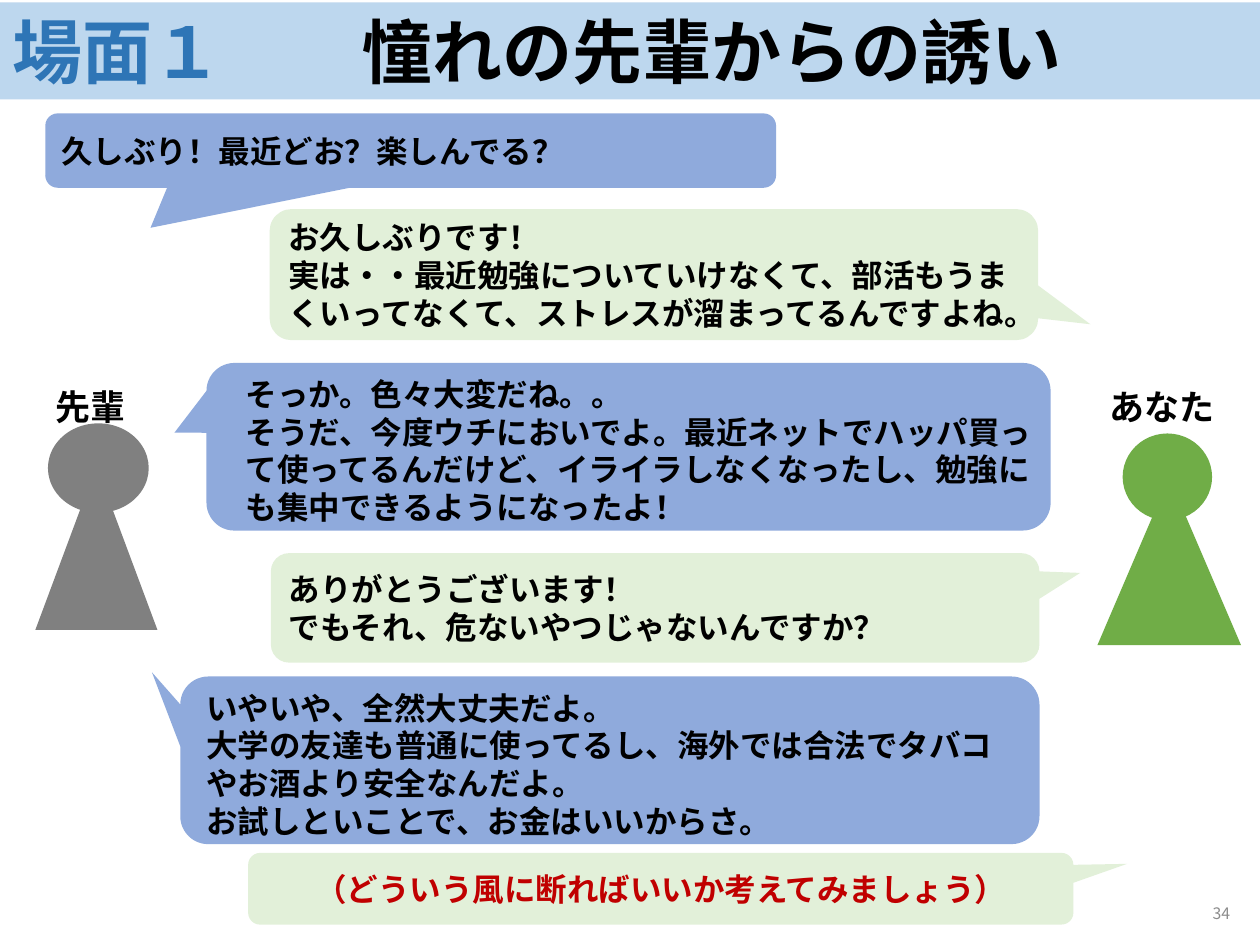
from lxml import etree
from pptx import Presentation
from pptx.dml.color import RGBColor
from pptx.enum import shapes, text
from pptx.oxml import ns
from pptx.util import Pt

BLUE = RGBColor(0x8F, 0xAA, 0xDC)
MINT = RGBColor(0xE2, 0xF0, 0xD9)
SKY = RGBColor(0xBD, 0xD7, 0xEE)
NAVY = RGBColor(0x2E, 0x75, 0xB6)
GRAY = RGBColor(0x80, 0x80, 0x80)
GREEN = RGBColor(0x70, 0xAD, 0x47)
PALE = RGBColor(0x8C, 0x8C, 0x8C)
RED = RGBColor(0xC0, 0, 0)
BLACK = RGBColor(0, 0, 0)
FONT = "Noto Sans CJK JP"
KIND = shapes.MSO_SHAPE
LEFT, MID, RIGHT = text.PP_ALIGN.LEFT, text.PP_ALIGN.CENTER, text.PP_ALIGN.RIGHT


def draw(home, kind, box, fill):
    shape = home.add_shape(kind, *map(Pt, box))
    shape.shadow.inherit = False
    shape.fill.solid()
    shape.fill.fore_color.rgb = fill
    shape.line.fill.background()
    return shape


def write(shape, lines, size=18, color=BLACK, bold=True, align=LEFT):
    """Fill the shape with one paragraph per line; a line is a list of (words, color) or a string."""
    frame = shape.text_frame
    frame.word_wrap = True
    frame.vertical_anchor = text.MSO_ANCHOR.MIDDLE
    for i, line in enumerate(lines):
        para = frame.add_paragraph() if i else frame.paragraphs[0]
        para.alignment = align
        para.line_spacing = Pt(size * 1.2)
        for words, tint in [(line, color)] if isinstance(line, str) else line:
            run = para.add_run()
            run.text = words
            for key, val in {"name": FONT, "size": Pt(size), "bold": bold}.items():
                setattr(run.font, key, val)
            run.font.color.rgb = tint
            east = etree.SubElement(run._r.get_or_add_rPr(), ns.qn("a:ea"))
            east.set("typeface", FONT)


deck = Presentation()
deck.slide_width, deck.slide_height = Pt(720), Pt(540)
page = deck.slides.add_slide(deck.slide_layouts[6]).shapes

# Title bar, with a tab stop between scene number and title
bar = draw(page, KIND.RECTANGLE, (0, 1.4, 720, 55.4), SKY)
write(bar, [[("場面１\t", NAVY), ("憧れの先輩からの誘い", BLACK)]], size=40)
tabs = etree.SubElement(bar.text_frame.paragraphs[0]._p.get_or_add_pPr(), ns.qn("a:tabLst"))
etree.SubElement(tabs, ns.qn("a:tab"), pos=str(Pt(200)), algn="l")

# Speech bubbles: box, tail tip, fill, lines, text box (None: text inside the bubble)
talk = [
    ((25.9, 64.8, 417.6, 42.5), (-0.356, 1.039), BLUE,
     ["久しぶり！最近どお？楽しんでる？"], None),
    ((154.1, 119.5, 439.2, 74.9), (0.568, 0.379), MINT,
     ["お久しぶりです！",
      "実は・・最近勉強についていけなくて、部活もうまくいってなくて、ストレスが溜まってるんですよね。"], None),
    ((118, 207.4, 482.4, 95.8), (-0.538, -0.084), BLUE,
     ["そっか。色々大変だね。。",
      "そうだ、今度ウチにおいでよ。最近ネットでハッパ買って使ってるんだけど、"
      "イライラしなくなったし、勉強にも集中できるようになったよ！"],
     (133.2, 210.2, 471.6, 94.3)),
    ((154.8, 316.1, 439.2, 62.6), (0.553, -0.319), MINT,
     ["ありがとうございます！", "でもそれ、危ないやつじゃないんですか？"], None),
    ((103, 386.6, 491, 95.8), (-0.533, -0.525), BLUE,
     ["いやいや、全然大丈夫だよ。",
      "大学の友達も普通に使ってるし、海外では合法でタバコやお酒より安全なんだよ。",
      "お試しといことで、お金はいいからさ。"],
     (110.9, 389.5, 481, 94.3)),
]
for box, tip, fill, lines, area in talk:
    bubble = draw(page, KIND.ROUNDED_RECTANGULAR_CALLOUT, box, fill)
    bubble.adjustments[0], bubble.adjustments[1] = tip
    write(page.add_textbox(*map(Pt, area)) if area else bubble, lines)

task = draw(page, KIND.ROUNDED_RECTANGULAR_CALLOUT, (141.8, 487.4, 471.6, 41), MINT)
task.adjustments[0], task.adjustments[1] = 0.565, -0.347
write(task, ["（どういう風に断ればいいか考えてみましょう）"], color=RED, align=MID)

# The two people: name, label left, body, head, fill
cast = [
    ("先輩", 5.8, (20.2, 266.4, 69.8, 93.6), (27.4, 241.9, 57.6, 51.1), GRAY),
    ("あなた", 618.5, (627.1, 272.9, 82.1, 95.8), (641.5, 247.7, 51.1, 49.7), GREEN),
]
for name, left, body, head, fill in cast:
    group = page.add_group_shape().shapes
    draw(group, KIND.ISOSCELES_TRIANGLE, body, fill)
    draw(group, KIND.OVAL, head, fill)
    label = page.add_textbox(Pt(left), Pt(216.7), Pt(91.4), Pt(31.7))
    write(label, [name], size=20, align=MID)

number = page.add_textbox(Pt(547.9), Pt(507.6), Pt(162), Pt(28.8))
write(number, ["34"], size=9, color=PALE, bold=False, align=RIGHT)

deck.save("out.pptx")
